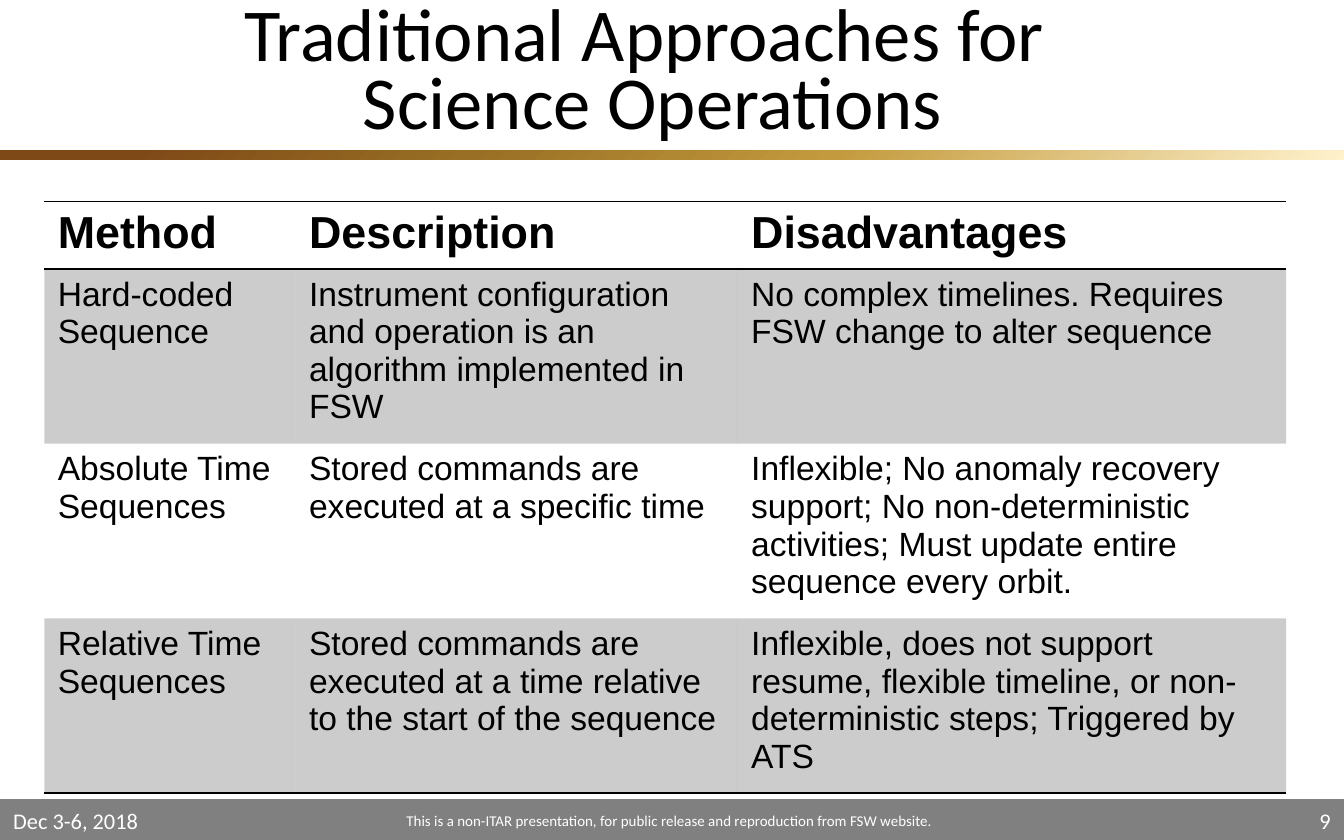
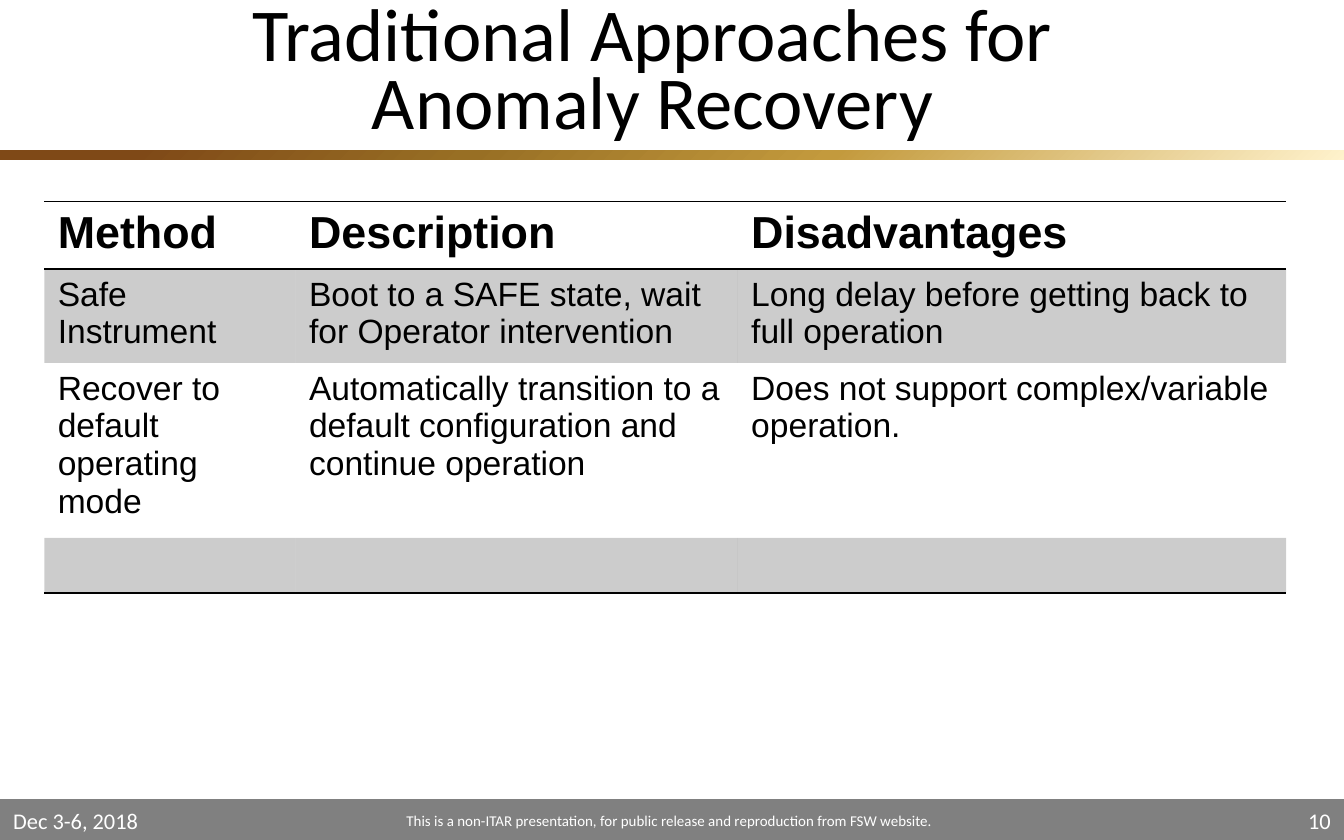
from dataclasses import dataclass

from lxml import etree
from pptx import Presentation
from pptx.dml.color import RGBColor
from pptx.enum.shapes import MSO_SHAPE
from pptx.enum.text import MSO_ANCHOR, MSO_AUTO_SIZE, PP_ALIGN
from pptx.oxml import parse_xml
from pptx.oxml.ns import nsdecls, qn
from pptx.util import Inches, Pt

RECTANGLE = MSO_SHAPE.RECTANGLE
MIDDLE = MSO_ANCHOR.MIDDLE
NO_AUTOFIT = MSO_AUTO_SIZE.NONE
LEFT, CENTER, RIGHT = PP_ALIGN.LEFT, PP_ALIGN.CENTER, PP_ALIGN.RIGHT

BLACK = RGBColor(0x00, 0x00, 0x00)
WHITE = RGBColor(0xFF, 0xFF, 0xFF)
FOOTER_GRAY = RGBColor(0x80, 0x80, 0x80)
GOLD_STOPS = (
    (10, RGBColor(0x7F, 0x49, 0x17)),
    (35, RGBColor(0x98, 0x6F, 0x24)),
    (62, RGBColor(0xC3, 0x9A, 0x3D)),
    (100, RGBColor(0xFF, 0xF2, 0xCC)),
)
HEADING_FONT = "Calibri"
TABLE_FONT = "Arial"
PLAIN_TABLE_STYLE = "{2D5ABB26-0587-4C30-8999-92F81FD0307C}"

SLIDE_WIDTH = Inches(10)
FOOTER_TOP, FOOTER_HEIGHT = Inches(5.96), Inches(0.29)
COLUMN_WIDTHS = (Inches(1.87), Inches(3.29), Inches(4.08))
ROW_HEIGHT = Inches(0.41)
HEADERS = ("Method", "Description", "Disadvantages")
RELEASE_NOTE = (
    "This is a non-ITAR presentation, for public release "
    "and reproduction from FSW website. "
)


@dataclass(frozen=True)
class FooterPart:
    left: float
    width: float
    text: str
    size: int
    align: PP_ALIGN


@dataclass(frozen=True)
class Approach:
    method: str = ""
    description: str = ""
    disadvantages: str = ""


@dataclass(frozen=True)
class ApproachSlide:
    title_lines: tuple[str, ...]
    number: int
    table_height: float
    approaches: tuple[Approach, ...]


SLIDES = (
    ApproachSlide(
        ("Traditional Approaches for ", "Science Operations"), 9, 3.71,
        (
            Approach(
                "Hard-coded Sequence",
                "Instrument configuration and operation is an algorithm "
                "implemented in FSW",
                "No complex timelines. Requires FSW change to alter sequence",
            ),
            Approach(
                "Absolute Time Sequences",
                "Stored commands are executed at a specific time",
                "Inflexible; No anomaly recovery support; No non-deterministic "
                "activities; Must update entire sequence every orbit.",
            ),
            Approach(
                "Relative Time Sequences",
                "Stored commands are executed at a time relative to the start "
                "of the sequence",
                "Inflexible, does not support resume, flexible timeline, or "
                "non-deterministic steps; Triggered by ATS",
            ),
        ),
    ),
    ApproachSlide(
        ("Traditional Approaches for Anomaly Recovery",), 10, 2.51,
        (
            Approach(
                "Safe Instrument",
                "Boot to a SAFE state, wait for Operator intervention",
                "Long delay before getting back to full operation",
            ),
            Approach(
                "Recover to default operating mode",
                "Automatically transition to a default configuration and "
                "continue operation",
                "Does not support complex/variable operation.",
            ),
            Approach(),
        ),
    ),
)


def add_run(paragraph, text: str, font: str, size: int, color: RGBColor,
            bold: bool = False) -> None:
    run = paragraph.add_run()
    run.text = text
    run.font.name = font
    run.font.size = Pt(size)
    run.font.color.rgb = color
    run.font.bold = bold


def set_opacity(properties, percent: int) -> None:
    color = properties.find(qn("a:solidFill")).find(qn("a:srgbClr"))
    etree.SubElement(color, qn("a:alpha"), val=str(percent * 1000))


def add_band(slide, top: int, height: int, fill: RGBColor):
    band = slide.shapes.add_shape(RECTANGLE, 0, top, SLIDE_WIDTH, height)
    band.shadow.inherit = False
    band.fill.solid()
    band.fill.fore_color.rgb = fill
    band.line.fill.background()
    return band


def apply_gold_gradient(band) -> None:
    stops = "".join(
        f'<a:gs pos="{position * 1000}"><a:srgbClr val="{color}"/></a:gs>'
        for position, color in GOLD_STOPS
    )
    gradient = parse_xml(
        f'<a:gradFill {nsdecls("a")} rotWithShape="1"><a:gsLst>{stops}</a:gsLst>'
        '<a:lin ang="2700000" scaled="1"/></a:gradFill>'
    )
    properties = band._element.spPr
    properties.replace(properties.find(qn("a:solidFill")), gradient)


def add_bands(slide) -> None:
    footer = add_band(slide, FOOTER_TOP, FOOTER_HEIGHT, FOOTER_GRAY)
    footer.line.color.rgb = FOOTER_GRAY
    footer.line.width = Pt(2)
    header = add_band(slide, 0, Inches(1.13), WHITE)
    set_opacity(header._element.spPr, 50)
    apply_gold_gradient(add_band(slide, Inches(1.12), Inches(0.07), WHITE))


def format_title(slide, lines: tuple[str, ...]) -> None:
    title = slide.shapes.title
    title.left, title.top = Inches(0.75), 0
    title.width, title.height = Inches(8.21), Inches(1.12)
    frame = title.text_frame
    frame.word_wrap = True
    frame.auto_size = NO_AUTOFIT
    frame.vertical_anchor = MIDDLE
    paragraph = frame.paragraphs[0]
    paragraph.alignment = CENTER
    paragraph.line_spacing = 0.75
    for index, line in enumerate(lines):
        if index:
            paragraph.add_line_break()
        add_run(paragraph, line, HEADING_FONT, 40, BLACK)
    slide.shapes._spTree.append(title._element)


def add_footer_part(slide, part: FooterPart) -> None:
    box = slide.shapes.add_textbox(
        Inches(part.left), FOOTER_TOP, Inches(part.width), FOOTER_HEIGHT
    )
    frame = box.text_frame
    frame.word_wrap = True
    frame.vertical_anchor = MIDDLE
    paragraph = frame.paragraphs[0]
    paragraph.alignment = part.align
    add_run(paragraph, part.text, HEADING_FONT, part.size, WHITE)


def add_border(cell, side: str) -> None:
    cell._tc.get_or_add_tcPr().append(parse_xml(
        f'<a:{side} {nsdecls("a")} w="{Pt(1)}"><a:solidFill>'
        f'<a:srgbClr val="{BLACK}"/></a:solidFill></a:{side}>'
    ))


def add_approach_table(slide, content: ApproachSlide) -> None:
    rows = [HEADERS] + [
        (item.method, item.description, item.disadvantages)
        for item in content.approaches
    ]
    holder = slide.shapes.add_table(
        len(rows), len(HEADERS), Inches(0.33), Inches(1.5),
        sum(COLUMN_WIDTHS), ROW_HEIGHT * len(rows),
    )
    for style in holder._element.iter(qn("a:tableStyleId")):
        style.text = PLAIN_TABLE_STYLE
    table = holder.table
    for column, width in zip(table.columns, COLUMN_WIDTHS):
        column.width = width
    for row_index, texts in enumerate(rows):
        is_header = row_index == 0
        for column_index, text in enumerate(texts):
            cell = table.cell(row_index, column_index)
            if is_header:
                add_border(cell, "lnT")
            if is_header or row_index == len(rows) - 1:
                add_border(cell, "lnB")
            if row_index % 2:
                cell.fill.solid()
                cell.fill.fore_color.rgb = BLACK
                set_opacity(cell._tc.tcPr, 20)
            else:
                cell.fill.background()
            if text:
                add_run(cell.text_frame.paragraphs[0], text, TABLE_FONT,
                        24 if is_header else 18, BLACK, is_header)
    holder.height = Inches(content.table_height)


def build_slide(presentation, content: ApproachSlide) -> None:
    slide = presentation.slides.add_slide(presentation.slide_layouts[5])
    add_bands(slide)
    format_title(slide, content.title_lines)
    footer_parts = (
        FooterPart(0, 2.33, "Dec 3-6, 2018", 12, LEFT),
        FooterPart(2.33, 5.33, RELEASE_NOTE, 8, CENTER),
        FooterPart(7.67, 2.33, str(content.number), 12, RIGHT),
    )
    for part in footer_parts:
        add_footer_part(slide, part)
    add_approach_table(slide, content)


def main() -> None:
    presentation = Presentation()
    presentation.slide_width = SLIDE_WIDTH
    presentation.slide_height = Inches(6.25)
    for content in SLIDES:
        build_slide(presentation, content)
    presentation.save("out.pptx")


if __name__ == "__main__":
    main()
